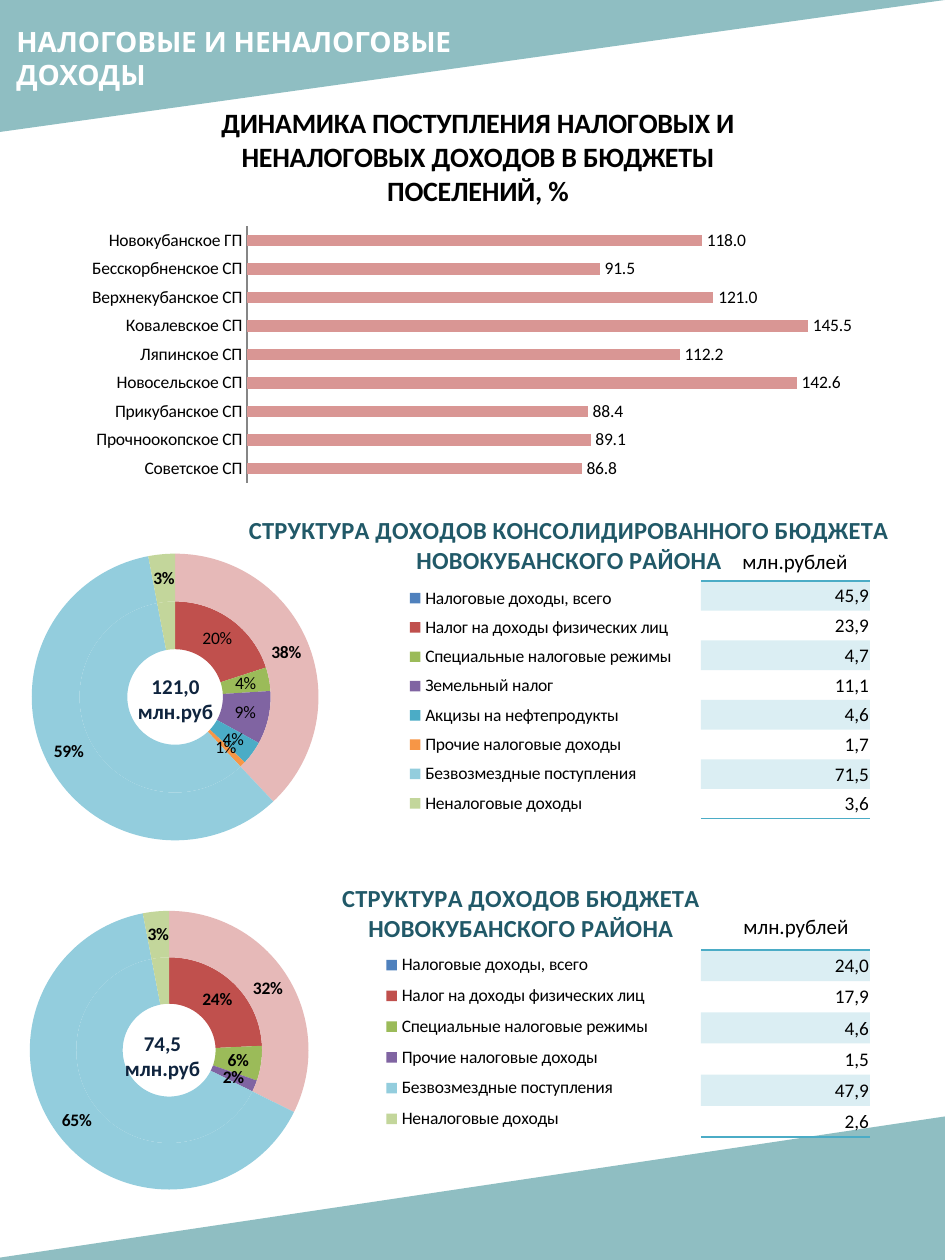
from pptx import Presentation
from pptx import util as u
from pptx.chart import data as chart_data
from pptx.dml import color
from pptx.enum import chart as charts, shapes, text
from pptx.oxml import parse_xml
from pptx.oxml.ns import nsdecls, qn

PX = 914400 / 126
rgb = color.RGBColor.from_string
BLACK, TEAL, CYAN, NAVY = "000000", "519AA0", "4BACC6", "0F243E"


def fade(fill, element, shade, percent):
    fill.solid()
    fill.fore_color.rgb = rgb(shade)
    element.find(".//" + qn("a:srgbClr")).append(
        parse_xml(f'<a:alpha {nsdecls("a")} val="{percent * 1000}"/>'))


def place(parent, target="", **position):
    for old in parent.findall(qn("c:layout")):
        parent.remove(old)
    modes = "".join(f'<c:{k}Mode val="edge"/>' for k in position if k in "xy")
    values = "".join(f'<c:{k} val="{v}"/>' for k, v in position.items())
    layout = parse_xml(f'<c:layout {nsdecls("c")}><c:manualLayout>{target}{modes}{values}'
                       '</c:manualLayout></c:layout>')
    overlay = parent.find(qn("c:overlay"))
    if overlay is None:
        parent.insert(0, layout)
    else:
        overlay.addprevious(layout)


presentation = Presentation()
presentation.slide_width, presentation.slide_height = u.Inches(7.5), u.Inches(10)
slide = presentation.slides.add_slide(presentation.slide_layouts[6])

for box, flip in (((0, 0, 945, 132), "flipV"), ((-16, 1116, 964, 144), "flipH")):
    shape = slide.shapes.add_shape(shapes.MSO_SHAPE.RIGHT_TRIANGLE, *(int(n * PX) for n in box))
    shape.shadow.inherit = False
    shape.line.fill.background()
    fade(shape.fill, shape.element.spPr, TEAL, 64)
    shape.element.spPr.find(qn("a:xfrm")).set(flip, "1")

wages, special, other = ("Налог на доходы физических лиц", "Специальные налоговые режимы",
                         "Прочие налоговые доходы")
total, grants, nontax = "Налоговые доходы, всего", "Безвозмездные поступления", "Неналоговые доходы"
accents = ["4F81BD", "C0504D", "9BBB59", "8064A2", CYAN, "F79646"]
pale = ["93CDDD", "C3D69B"]
all_charts = [
    {"type": charts.XL_CHART_TYPE.DOUGHNUT, "box": (4, 501, 925, 370), "size": 14, "shade": "215968",
     "title": "СТРУКТУРА ДОХОДОВ КОНСОЛИДИРОВАННОГО БЮДЖЕТА НОВОКУБАНСКОГО РАЙОНА",
     "categories": [total, wages, special, "Земельный налог", "Акцизы на нефтепродукты",
                    other, grants, nontax],
     "series": [[None, 20, 4, 9, 4, 1, 59, 3], [38] + [None] * 5 + [59, 3]],
     "bold": [False, True], "colors": accents + pale,
     "title_at": {"x": 0.26, "y": 0.02},
     "legend_at": {"x": 0.42, "y": 0.21, "w": 0.32, "h": 0.66},
     "plot_at": {"x": 0.03, "y": 0.14, "w": 0.31, "h": 0.78}},
    {"type": charts.XL_CHART_TYPE.DOUGHNUT, "box": (0, 861, 940, 416), "size": 14, "shade": "215968",
     "title": "СТРУКТУРА ДОХОДОВ БЮДЖЕТА\nНОВОКУБАНСКОГО РАЙОНА",
     "categories": [total, wages, special, other, grants, nontax],
     "series": [[None, 24, 6, 2, 64, 3], [32] + [None] * 3 + [64, 3]],
     "bold": [True, True], "colors": accents[:4] + pale,
     "title_at": {"x": 0.36, "y": 0.04},
     "legend_at": {"x": 0.39, "y": 0.2, "w": 0.32, "h": 0.47},
     "plot_at": {"x": 0.03, "y": 0.12, "w": 0.3, "h": 0.67}},
    {"type": charts.XL_CHART_TYPE.BAR_CLUSTERED, "box": (76, 84, 804, 407), "size": 16, "shade": BLACK,
     "title": "ДИНАМИКА ПОСТУПЛЕНИЯ НАЛОГОВЫХ И НЕНАЛОГОВЫХ ДОХОДОВ В БЮДЖЕТЫ ПОСЕЛЕНИЙ, %",
     "categories": [f"{name}ское {kind}" for name, kind in (
         ("Новокубан", "ГП"), ("Бесскорбнен", "СП"), ("Верхнекубан", "СП"),
         ("Ковалев", "СП"), ("Ляпин", "СП"), ("Новосель", "СП"),
         ("Прикубан", "СП"), ("Прочноокоп", "СП"), ("Совет", "СП"))],
     "series": [[118, 91.5, 121, 145.5, 112.2, 142.6, 88.4, 89.1, 86.8]]},
]
for item in all_charts:
    data = chart_data.CategoryChartData()
    data.categories = item["categories"]
    for number, values in enumerate(item["series"], 1):
        data.add_series(f"Series {number}", values)
    chart = slide.shapes.add_chart(item["type"], *(int(n * PX) for n in item["box"]), data).chart
    for name, value in {"name": "Calibri", "size": u.Pt(10)}.items():
        setattr(chart.font, name, value)
    chart.font.color.rgb = rgb(BLACK)
    chart.element.find(qn("c:chart")).addnext(
        parse_xml(f'<c:spPr {nsdecls("c", "a")}><a:noFill/><a:ln><a:noFill/></a:ln></c:spPr>'))
    chart.has_title = True
    title = chart.chart_title
    title.text_frame.text = item["title"]
    for paragraph in title.text_frame.paragraphs:
        font = paragraph.runs[0].font
        for name, value in {"name": "Calibri", "size": u.Pt(item["size"]), "bold": True}.items():
            setattr(font, name, value)
        font.color.rgb = rgb(item["shade"])
    plot = chart.plots[0]
    if "colors" not in item:
        chart.has_legend = False
        plot.vary_by_categories = False
        plot.gap_width, plot.overlap = 150, -25
        bars = plot.series[0]
        bars.format.fill.solid()
        bars.format.fill.fore_color.rgb = rgb("D99694")
        for name, value in {"show_value": True, "number_format": "#,##0.0",
                            "number_format_is_linked": False,
                            "position": charts.XL_LABEL_POSITION.OUTSIDE_END}.items():
            setattr(bars.data_labels, name, value)
        for name, value in {"reverse_order": True, "has_major_gridlines": False,
                            "major_tick_mark": charts.XL_TICK_MARK.NONE}.items():
            setattr(chart.category_axis, name, value)
        chart.category_axis.format.line.color.rgb = rgb("868686")
        for name, value in {"visible": False, "has_major_gridlines": False,
                            "minimum_scale": 0}.items():
            setattr(chart.value_axis, name, value)
        continue
    plot.vary_by_categories = True
    chart.has_legend = True
    chart.legend.position = charts.XL_LEGEND_POSITION.RIGHT
    chart.legend.include_in_layout = False
    place(title._element, **item["title_at"])
    place(chart.legend._element, **item["legend_at"])
    place(chart.element.find(".//" + qn("c:plotArea")), '<c:layoutTarget val="inner"/>',
          **item["plot_at"])
    for ring, series in enumerate(plot.series):
        for index, shade in enumerate(item["colors"]):
            fill = series.points[index].format.fill
            fill.solid()
            fill.fore_color.rgb = rgb("E6B9B8" if ring and not index else shade)
        labels = series.data_labels
        for name, value in {"show_percentage": True, "show_value": False, "number_format": "0%",
                            "number_format_is_linked": False}.items():
            setattr(labels, name, value)
        labels.font.bold = item["bold"][ring]
        labels.font.size = u.Pt(10)
        labels.font.color.rgb = rgb(BLACK)
        if ring == 0:
            last = len(item["colors"]) - 1
            for index in (last, last - 1):
                labels._element.insert(0, parse_xml(
                    f'<c:dLbl {nsdecls("c")}><c:idx val="{index}"/><c:delete val="1"/></c:dLbl>'))

left, center = text.PP_ALIGN.LEFT, text.PP_ALIGN.CENTER
for words, box, size, face, shade, bold, align, wrap in (
        ("НАЛОГОВЫЕ И НЕНАЛОГОВЫЕ ДОХОДЫ", (4, 18, 568, 81), 16, "Karla", "FFFFFF", True, left, True),
        ("121,0 млн.руб", (120, 667, 111, 63), 12, "Calibri", NAVY, True, center, True),
        ("74,5 млн.руб", (107, 1024, 111, 63), 12, "Calibri", NAVY, True, center, True),
        ("млн.рублей", (730, 542, 135, 38), 12, "Calibri", BLACK, False, left, False),
        ("млн.рублей", (731, 907, 135, 38), 12, "Calibri", BLACK, False, left, False)):
    frame = slide.shapes.add_textbox(*(int(n * PX) for n in box)).text_frame
    frame.word_wrap = wrap
    frame.auto_size = text.MSO_AUTO_SIZE.SHAPE_TO_FIT_TEXT
    paragraph = frame.paragraphs[0]
    paragraph.text, paragraph.alignment = words, align
    font = paragraph.runs[0].font
    for name, value in {"name": face, "size": u.Pt(size), "bold": bold}.items():
        setattr(font, name, value)
    font.color.rgb = rgb(shade)

for top, height, amounts in (
        (581, 238, ["45,9", "23,9", "4,7", "11,1", "4,6", "1,7", "71,5", "3,6"]),
        (950, 187, ["24,0", "17,9", "4,6", "1,5", "47,9", "2,6"])):
    table = slide.shapes.add_table(len(amounts), 1, *(int(n * PX) for n in (701, top, 169, height))).table
    table.first_row = table.horz_banding = False
    for row, amount in enumerate(amounts):
        cell = table.cell(row, 0)
        for name, value in {"text": amount, "vertical_anchor": text.MSO_ANCHOR.MIDDLE,
                            "margin_left": int(PX), "margin_right": int(PX),
                            "margin_top": int(PX), "margin_bottom": 0}.items():
            setattr(cell, name, value)
        paragraph = cell.text_frame.paragraphs[0]
        paragraph.alignment = text.PP_ALIGN.RIGHT
        font = paragraph.runs[0].font
        for name, value in {"name": "Calibri", "size": u.Pt(11)}.items():
            setattr(font, name, value)
        font.color.rgb = rgb(BLACK)
        if row % 2:
            cell.fill.background()
        else:
            fade(cell.fill, cell._tc.tcPr, CYAN, 20)
        edges = {0: ("T", CYAN), len(amounts) - 1: ("B", CYAN)}
        drawn = edges.get(row, ("", ""))[0]
        for side in "BTRL":
            paint = f'<a:solidFill><a:srgbClr val="{CYAN}"/></a:solidFill>' if side == drawn else "<a:noFill/>"
            cell._tc.tcPr.insert(0, parse_xml(f'<a:ln{side} {nsdecls("a")} w="12700">{paint}</a:ln{side}>'))

presentation.save("out.pptx")
